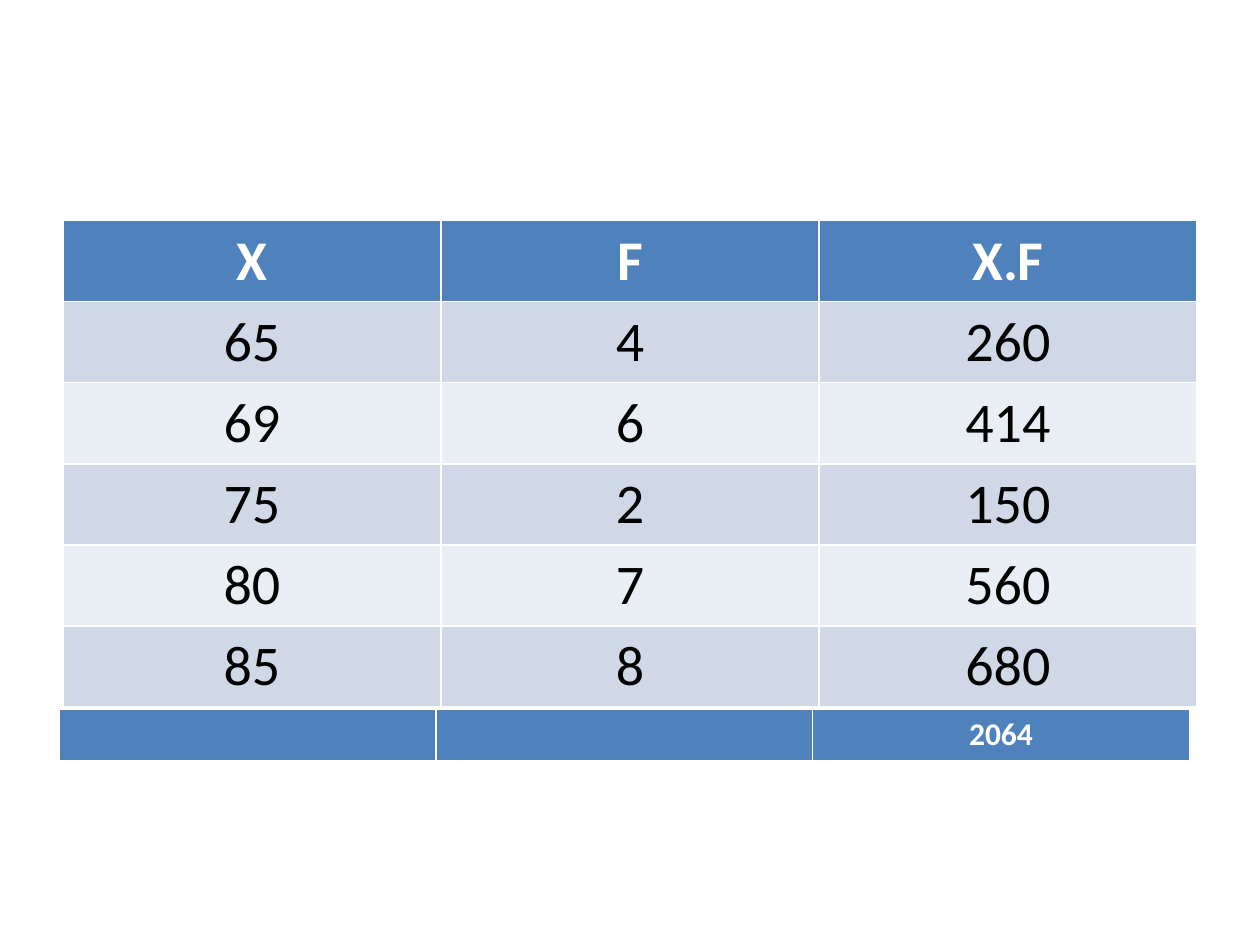
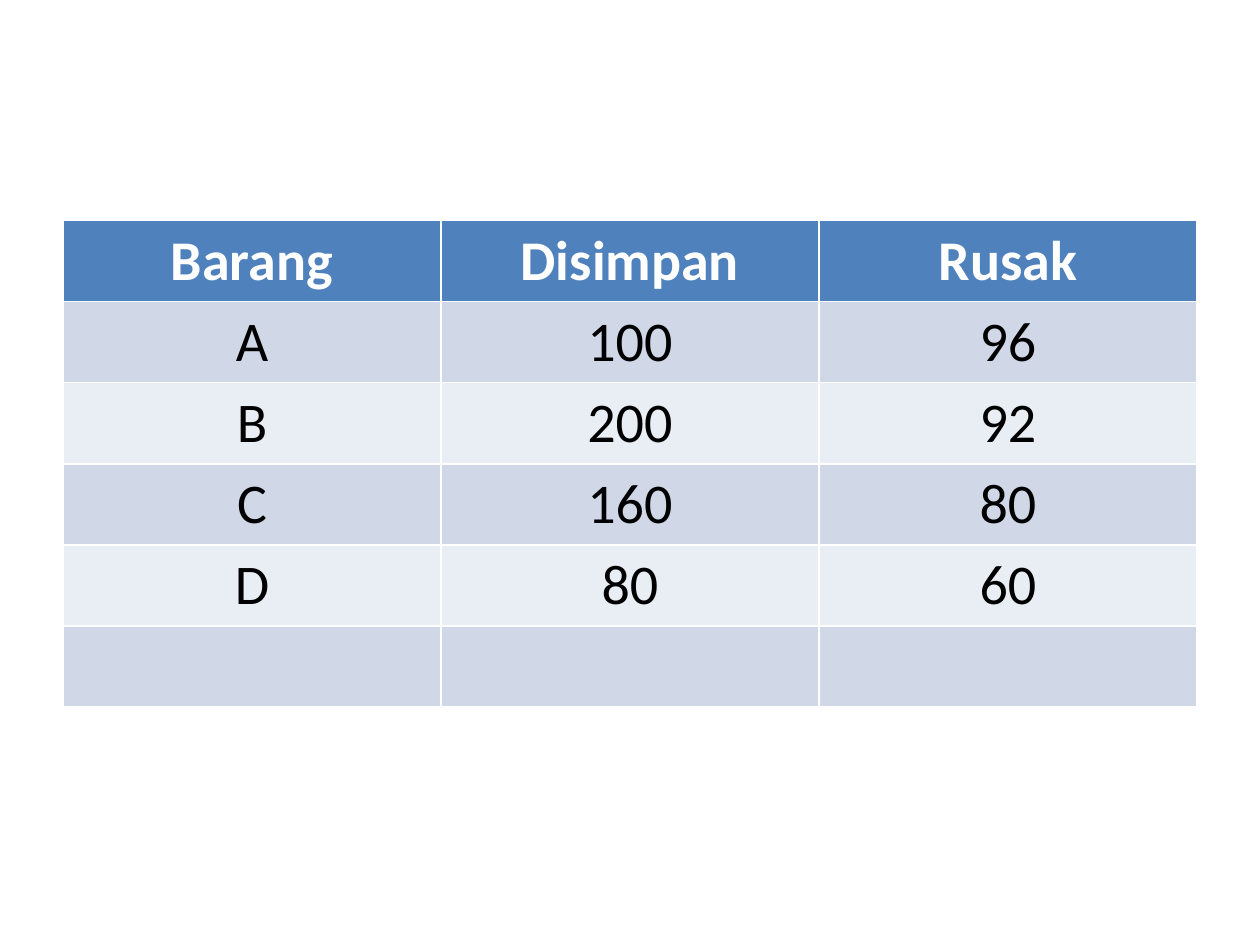
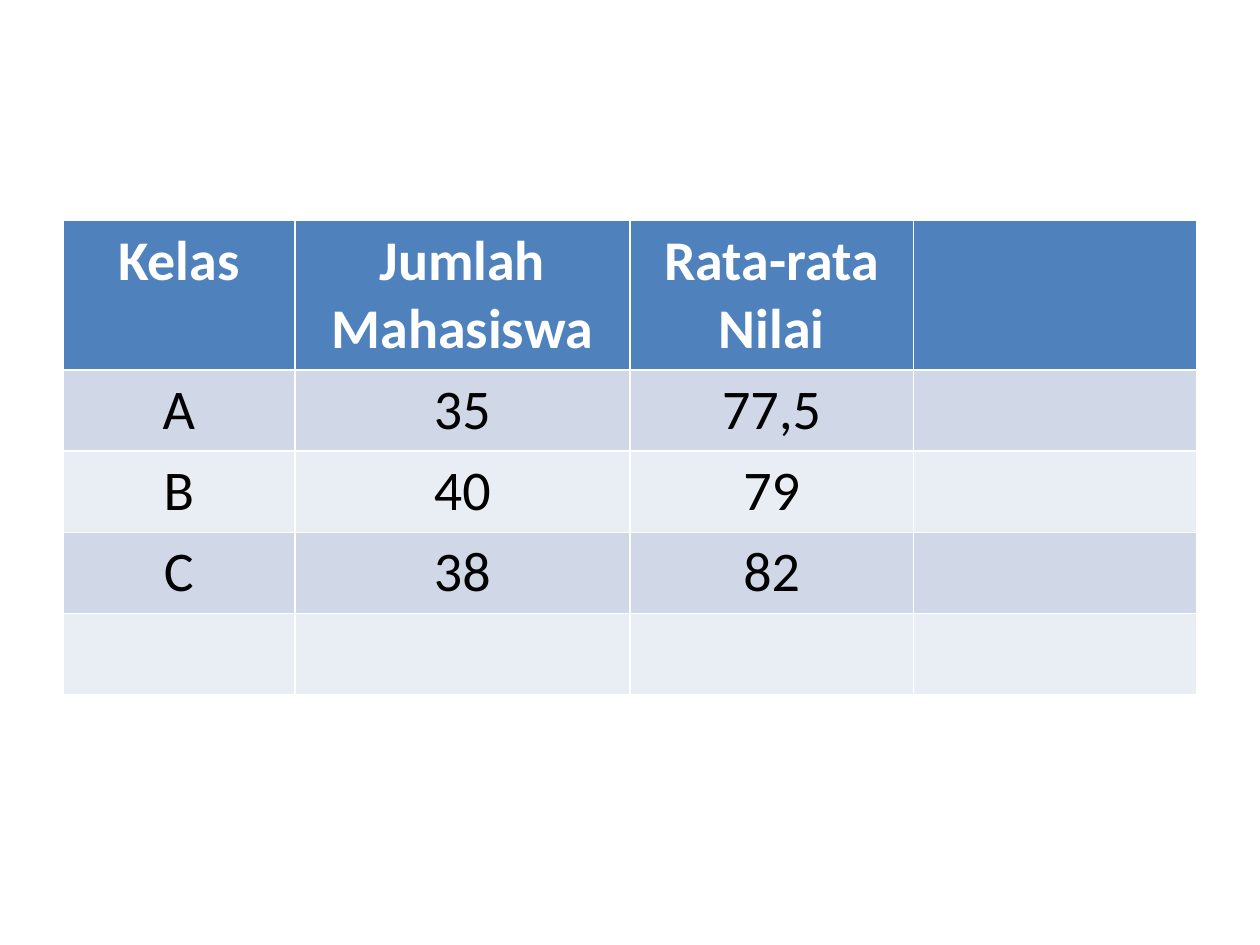
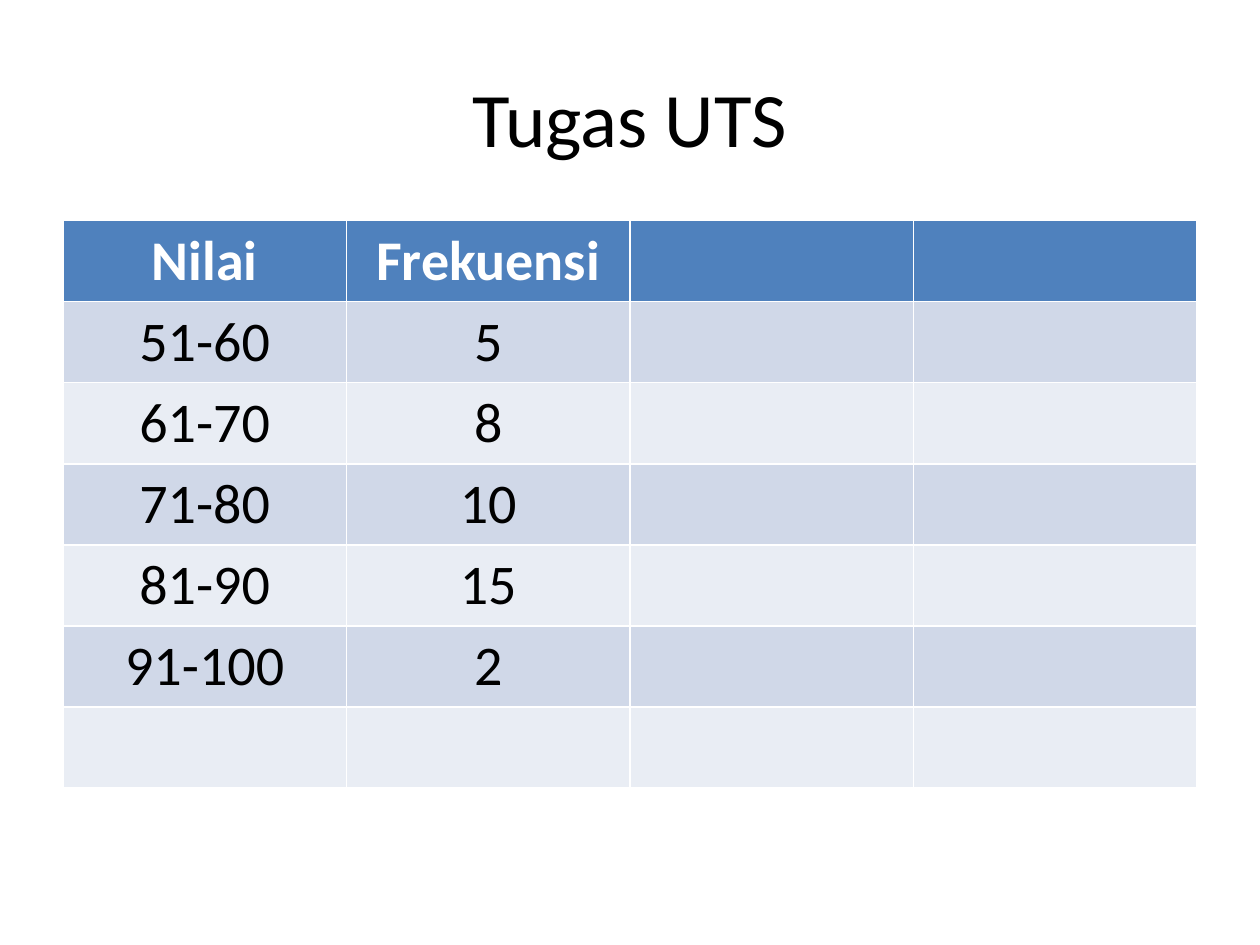
from pptx import Presentation
from pptx.dml.color import RGBColor as Rgb
from pptx.enum.text import MSO_ANCHOR as Anchor, PP_ALIGN as Align
from pptx.oxml.ns import qn
from pptx.util import Pt
from lxml.etree import SubElement

PX = 9144  # 100 px to the inch
FONT = "Calibri"
COLORS = {
    "header": "4F81BD",
    "band_dark": "D0D8E8",
    "band_light": "E9EDF4",
    "header_text": "FFFFFF",
    "text": "000000",
}
BANDS = ("band_dark", "band_light")

TITLE_BOX = (50, 30, 900, 125)
MAIN = {"left": 50, "top": 175, "size": 32}
TOTAL = {"left": 47, "top": 563, "size": 18}
ROW_HEIGHT = 41
TITLE_SIZE = 44

SLIDES = [
    {"tables": [
        {**MAIN, "height": 380, "columns": [300] * 3, "rows": [
            ("X", "F", "X.F"),
            ("65", "4", "260"),
            ("69", "6", "414"),
            ("75", "2", "150"),
            ("80", "7", "560"),
            ("85", "8", "680"),
        ]},
        {**TOTAL, "height": 41, "columns": [299] * 3, "rows": [("", "", "2064")]},
    ]},
    {"tables": [
        {**MAIN, "height": 380, "columns": [300] * 3, "rows": [
            ("Barang", "Disimpan", "Rusak"),
            ("A", "100", "96"),
            ("B", "200", "92"),
            ("C", "160", "80"),
            ("D", "80", "60"),
            ("", "", ""),
        ]},
    ]},
    {"tables": [
        {**MAIN, "height": 370, "columns": [184, 266, 225, 225], "rows": [
            ("Kelas", "Jumlah Mahasiswa", "Rata-rata Nilai", ""),
            ("A", "35", "77,5", ""),
            ("B", "40", "79", ""),
            ("C", "38", "82", ""),
            ("", "", "", ""),
        ]},
    ]},
    {"title": "Tugas UTS", "tables": [
        {**MAIN, "height": 443, "columns": [225] * 4, "rows": [
            ("Nilai", "Frekuensi", "", ""),
            ("51-60", "5", "", ""),
            ("61-70", "8", "", ""),
            ("71-80", "10", "", ""),
            ("81-90", "15", "", ""),
            ("91-100", "2", "", ""),
            ("", "", "", ""),
        ]},
    ]},
]


def color(name):
    return Rgb.from_string(COLORS[name])


def write(paragraph, text, size, text_color, bold=False):
    """Add one centred run; an empty paragraph only keeps its line height."""
    paragraph.alignment = Align.CENTER
    if not text:
        SubElement(paragraph._p, qn("a:endParaRPr"), sz=str(size * 100))
        return
    run = paragraph.add_run()
    run.text = text
    run.font.name = FONT
    run.font.size = Pt(size)
    run.font.bold = bold
    run.font.color.rgb = color(text_color)


def add_title(slide, text):
    title = slide.shapes.title
    title.left, title.top, title.width, title.height = (n * PX for n in TITLE_BOX)
    title.text_frame.vertical_anchor = Anchor.MIDDLE
    write(title.text_frame.paragraphs[0], text, TITLE_SIZE, "text")


def add_banded_table(slide, left, top, height, size, columns, rows):
    """The default table style draws the white rules between the cells."""
    frame = slide.shapes.add_table(
        len(rows), len(columns), left * PX, top * PX, sum(columns) * PX, height * PX)
    table = frame.table
    for column, width in zip(table.columns, columns):
        column.width = width * PX
    for r, values in enumerate(rows):
        is_header = r == 0
        table.rows[r].height = ROW_HEIGHT * PX
        for c, value in enumerate(values):
            cell = table.cell(r, c)
            cell.fill.solid()
            cell.fill.fore_color.rgb = color("header" if is_header else BANDS[(r - 1) % 2])
            write(cell.text_frame.paragraphs[0], value, size,
                  "header_text" if is_header else "text", is_header)
    frame.height = height * PX  # rows grow with their text


def main():
    deck = Presentation()
    deck.slide_width, deck.slide_height = 1000 * PX, 750 * PX
    title_only, blank = deck.slide_layouts[5], deck.slide_layouts[6]
    for content in SLIDES:
        title = content.get("title")
        slide = deck.slides.add_slide(title_only if title else blank)
        if title:
            add_title(slide, title)
        for table in content["tables"]:
            add_banded_table(slide, **table)
    deck.save("out.pptx")


if __name__ == "__main__":
    main()
